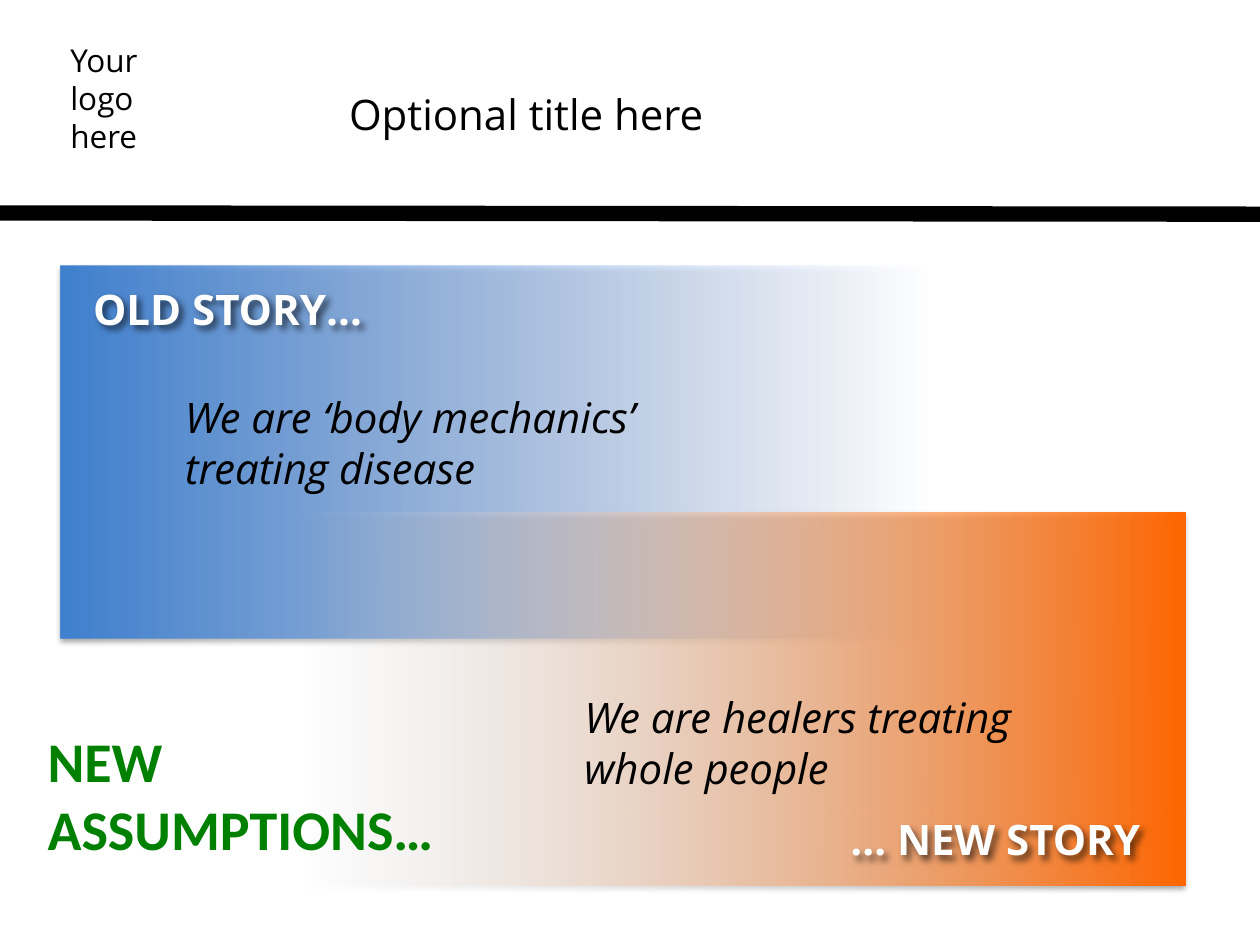
from dataclasses import dataclass

from lxml import etree
from pptx import Presentation
from pptx.dml.color import RGBColor
from pptx.enum.shapes import MSO_CONNECTOR, MSO_SHAPE
from pptx.enum.text import MSO_ANCHOR, MSO_AUTO_SIZE, PP_ALIGN
from pptx.oxml.ns import qn
from pptx.util import Inches, Pt

LINE = MSO_CONNECTOR.STRAIGHT
RECT = MSO_SHAPE.RECTANGLE
TOP = MSO_ANCHOR.TOP
LEFT = PP_ALIGN.LEFT
GROW = MSO_AUTO_SIZE.SHAPE_TO_FIT_TEXT


@dataclass(frozen=True)
class Theme:
    font: str = "Open Sans"
    accent: str = "Calibri"
    black: str = "000000"
    white: str = "FFFFFF"
    blue: str = "3F80CE"
    pale: str = "A4C4FF"
    orange: str = "FF6600"
    green: str = "008000"
    small: int = 18
    body: int = 24
    large: int = 32


THEME = Theme()


def rgb(code):
    return RGBColor.from_string(code)


def place(shape, box):
    shape.left, shape.top, shape.width, shape.height = map(Inches, box)


def write(shape, text, size=THEME.body, color=THEME.black, font=THEME.font,
          bold=False, italic=False):
    frame = shape.text_frame
    frame.word_wrap = True
    frame.auto_size = GROW
    frame.vertical_anchor = TOP
    para = frame.paragraphs[0]
    para.alignment = LEFT
    run = para.add_run()
    run.text = text
    run.font.name = font
    run.font.size = Pt(size)
    run.font.bold = bold
    run.font.italic = italic
    run.font.color.rgb = rgb(color)


def add_text(slide, text, box, **style):
    shape = slide.shapes.add_textbox(*map(Inches, box))
    write(shape, text, **style)
    return shape


def add_shadow(shape, blur, dist, angle, alpha):
    """Give a shape a soft black shadow; angle in degrees, alpha in percent."""
    props = shape._element.spPr
    effects = props.find(qn("a:effectLst"))
    if effects is None:
        effects = etree.SubElement(props, qn("a:effectLst"))
    shade = etree.SubElement(
        effects, qn("a:outerShdw"), blurRad=str(Pt(blur)), dist=str(Pt(dist)),
        dir=str(angle * 60000), algn="tl", rotWithShape="0")
    color = etree.SubElement(shade, qn("a:srgbClr"), val=THEME.black)
    etree.SubElement(color, qn("a:alpha"), val=str(alpha * 1000))


def add_panel(slide, box, start, end, stop=1.0, flip=False):
    """Add a rectangle that fades from a solid colour to a clear one."""
    shape = slide.shapes.add_shape(RECT, *map(Inches, box))
    shape.line.fill.background()
    shape.shadow.inherit = False
    shape.fill.gradient()
    shape.fill.gradient_angle = 0
    stops = shape.fill.gradient_stops
    for item, color, pos in zip(stops, (start, end), (0, stop)):
        item.color.rgb = rgb(color)
        item.position = pos
    props = shape._element.spPr
    clear = props.findall(".//" + qn("a:srgbClr"))[-1]
    etree.SubElement(clear, qn("a:alpha"), val="0")
    if flip:
        props.find(qn("a:xfrm")).set("flipH", "1")
    add_shadow(shape, 3.1, 1.8, 90, 35)


def add_rule(slide):
    ends = map(Inches, (-0.21, 1.69, 10.18, 1.7))
    rule = slide.shapes.add_connector(LINE, *ends)
    rule.line.color.rgb = rgb(THEME.black)
    rule.line.width = Pt(8.75)
    etree.SubElement(rule._element.spPr, qn("a:effectLst"))


def add_label(slide, text, box):
    label = add_text(slide, text, box, color=THEME.white, bold=True)
    add_shadow(label, 4, 3, 45, 60)


def main():
    deck = Presentation()
    deck.slide_width, deck.slide_height = Inches(10), Inches(7.5)
    slide = deck.slides.add_slide(deck.slide_layouts[5])

    add_rule(slide)
    add_text(slide, "Your logo here", (0.46, 0.28, 1.17, 1.01), size=THEME.small)
    title = slide.shapes.title
    place(title, (2.67, 0.65, 3.09, 0.5))
    write(title, "Optional title here")

    add_panel(slide, (0.48, 2.11, 7.04, 2.96), THEME.blue, THEME.pale, stop=0.98)
    add_panel(slide, (2.37, 4.07, 7.04, 2.96), THEME.orange, THEME.white, flip=True)
    add_label(slide, "OLD STORY…", (0.64, 2.2, 2.82, 0.5))
    add_label(slide, "… NEW STORY", (6.65, 6.41, 2.94, 0.5))
    add_text(slide, "We are ‘body mechanics’ treating disease",
             (1.37, 3.06, 4.04, 0.91), italic=True)
    add_text(slide, "We are healers treating whole people",
             (4.54, 5.44, 4.04, 0.91), italic=True)
    add_text(slide, "NEW ASSUMPTIONS…", (0.28, 5.72, 3.47, 1.18),
             size=THEME.large, color=THEME.green, font=THEME.accent, bold=True)

    deck.save("out.pptx")


if __name__ == "__main__":
    main()
